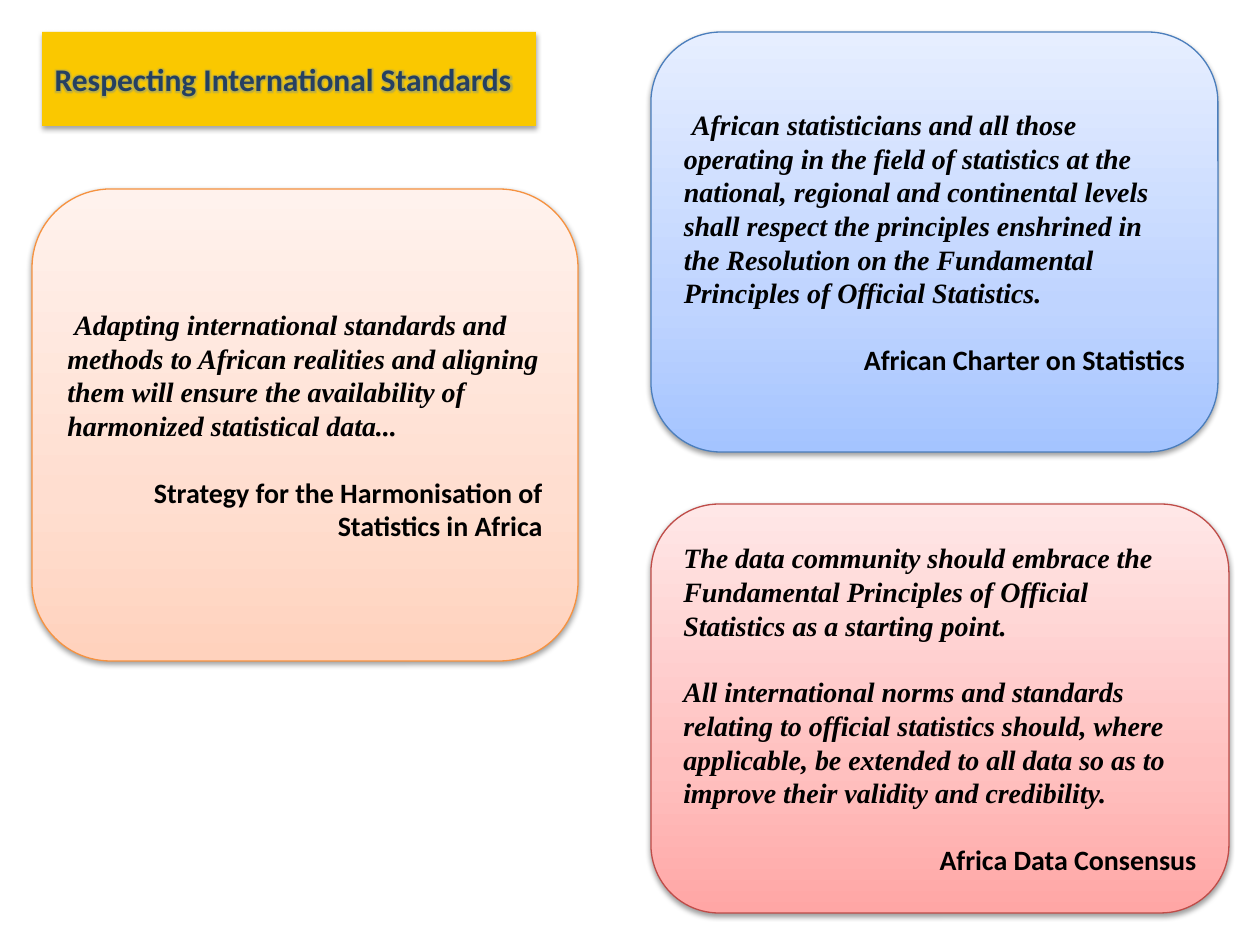
import pptx
import pptx.util
import pptx.dml.color
import pptx.enum.shapes
import pptx.enum.text
import pptx.oxml.ns
from lxml import etree

qn = pptx.oxml.ns.qn
Pt = pptx.util.Pt
Align = pptx.enum.text.PP_ALIGN
SCALE = 914400 / 126
COLORS = {
    "gold": "FAC800", "navy": "254061", "ink": "000000", "glow": "4F81BD",
    "red": "BF4C48", "blue": "4B7EBC", "orange": "F69240",
}
FADES = {
    "red": ("FFA6A5", "FFC0BF", "FFE7E7"),
    "blue": ("A4C4FF", "BFD4FF", "E6EEFF"),
    "orange": ("FFD2BD", "FFDED0", "FFF2ED"),
}
STOPS = (0, 35, 100)


def px(n):
    return pptx.util.Emu(round(n * SCALE))


def rgb(name):
    return pptx.dml.color.RGBColor.from_string(COLORS[name])


def add(parent, tag, **attrs):
    return etree.SubElement(parent, qn(tag), {k: str(v) for k, v in attrs.items()})


def tint(parent, color, alpha=100):
    node = add(parent, "a:srgbClr", val=color)
    if alpha < 100:
        add(node, "a:alpha", val=alpha * 1000)


def write(para, text, font="Times New Roman", size=16, color="ink",
          italic=True, align=Align.LEFT, before=0, indent=0):
    if indent:
        para._p.get_or_add_pPr().set("indent", str(px(indent)))
    para.alignment = align
    para.space_before = Pt(before)
    run = para.add_run()
    run.text = text
    run.font.name = font
    run.font.size = Pt(size)
    run.font.bold = True
    run.font.italic = italic
    run.font.color.rgb = rgb(color)
    return run


class Deck:
    font = "Calibri"
    gap = 19

    def __init__(self):
        self.prs = pptx.Presentation()
        self.prs.slide_width = px(1260)
        self.prs.slide_height = px(945)
        self.slide = self.prs.slides.add_slide(self.prs.slide_layouts[5])

    def shade(self, shape, alpha, dist):
        shape.shadow.inherit = False
        effect = shape._element.spPr.find(qn("a:effectLst"))
        node = add(effect, "a:outerShdw", blurRad=Pt(3.1), dist=Pt(dist),
                   dir=5400000, rotWithShape=0)
        tint(node, COLORS["ink"], alpha)

    def title(self, text, x, y, w, h):
        shape = self.slide.shapes.title
        shape.left, shape.top, shape.width, shape.height = map(px, (x, y, w, h))
        shape.fill.solid()
        shape.fill.fore_color.rgb = rgb("gold")
        shape.line.fill.background()
        self.shade(shape, 35, 1.8)
        frame = shape.text_frame
        frame.word_wrap = True
        frame.auto_size = pptx.enum.text.MSO_AUTO_SIZE.NONE
        frame.vertical_anchor = pptx.enum.text.MSO_ANCHOR.MIDDLE
        run = write(frame.paragraphs[0], text, font=self.font, size=18,
                    color="navy", italic=False)
        effect = etree.Element(qn("a:effectLst"))
        tint(add(effect, "a:glow", rad=45500), COLORS["glow"], 35)
        run.font.fill._xPr.find(qn("a:solidFill")).addnext(effect)

    def quote(self, lines, source, hue, x, y, w, h, indent=0):
        kind = pptx.enum.shapes.MSO_SHAPE.ROUNDED_RECTANGLE
        shape = self.slide.shapes.add_shape(kind, *map(px, (x, y, w, h)))
        shape.fill.gradient()
        shape.fill.gradient_angle = 90
        stops = shape._element.spPr.find(qn("a:gradFill")).find(qn("a:gsLst"))
        for stop in list(stops):
            stops.remove(stop)
        for pos, color in zip(STOPS, FADES[hue]):
            tint(add(stops, "a:gs", pos=pos * 1000), color)
        shape.line.color.rgb = rgb(hue)
        shape.line.width = Pt(0.75)
        self.shade(shape, 38, 1.6)
        frame = shape.text_frame
        frame.word_wrap = True
        frame.vertical_anchor = pptx.enum.text.MSO_ANCHOR.MIDDLE
        para = frame.paragraphs[0]
        for i, line in enumerate(lines):
            write(para, line, indent=indent, before=self.gap if i else 0)
            para = frame.add_paragraph()
        write(para, source, font=self.font, italic=False, align=Align.RIGHT,
              before=self.gap)


def main():
    deck = Deck()
    deck.title("Respecting International Standards", 42, 32, 494, 94)
    deck.quote(
        ["The data community should embrace the Fundamental Principles of "
         "Official Statistics as a starting point.",
         "All international norms and standards relating to official statistics "
         "should, where applicable, be extended to all data so as to improve "
         "their validity and credibility."],
        "Africa Data Consensus", "red", 651, 504, 578, 409)
    deck.quote(
        ["African statisticians and all those operating in the field of "
         "statistics at the national, regional and continental levels shall "
         "respect the principles enshrined in the Resolution on the Fundamental "
         "Principles of Official Statistics."],
        "African Charter on Statistics", "blue", 651, 32, 567, 420, indent=8)
    deck.quote(
        ["Adapting international standards and methods to African realities and "
         "aligning them will ensure the availability of harmonized statistical "
         "data..."],
        "Strategy for the Harmonisation of Statistics in Africa",
        "orange", 32, 189, 546, 472, indent=7)
    deck.prs.save("out.pptx")


if __name__ == "__main__":
    main()
